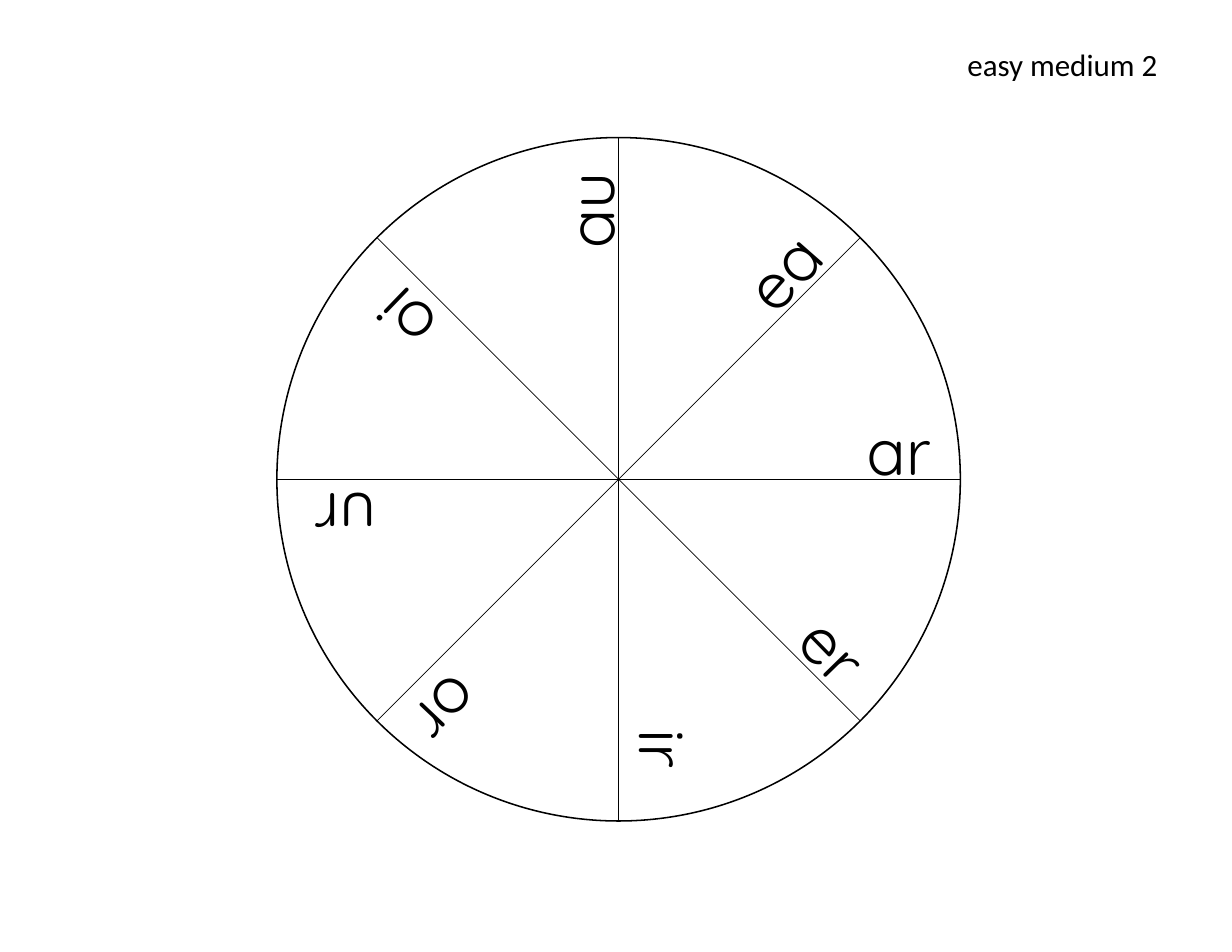
from math import cos, radians, sin

from lxml import etree
from pptx import Presentation
from pptx.dml.color import RGBColor
from pptx.enum.shapes import MSO_CONNECTOR, MSO_SHAPE
from pptx.enum.text import MSO_AUTO_SIZE
from pptx.oxml.ns import qn
from pptx.util import Cm, Pt

STRAIGHT = MSO_CONNECTOR.STRAIGHT
OVAL = MSO_SHAPE.OVAL
GROW = MSO_AUTO_SIZE.SHAPE_TO_FIT_TEXT
BLACK = RGBColor(0x00, 0x00, 0x00)

# Content, lengths in cm: text, centre x, centre y, box width, rotation
LABELS = [
    ("ar", 20.55, 10.22, 2.29, 0),
    ("er", 18.99, 14.82, 2.11, 45.7),
    ("ir", 15.06, 17.23, 1.88, 90),
    ("or", 10.16, 16.14, 1.98, 133.5),
    ("ur", 7.73, 11.77, 2.11, 180),
    ("oi", 9.12, 7.2, 1.88, 224),
    ("au", 13.36, 4.48, 2.79, 270),
    ("ea", 17.93, 5.96, 2.74, 311.3),
]
LABEL_HEIGHT = 2.06
LABEL_FONT = {"name": "Quicksand", "size": Pt(41.9)}
TITLE = "easy medium 2"
TITLE_BOX = (21.69, 0.91, 5.16, 1.12)
TITLE_FONT = {"name": "Calibri", "size": Pt(19.9)}
CENTRE_X, CENTRE_Y = 14.03, 10.87
RADIUS = 7.75
SPOKE_ANGLES = (90, 0, 45, 135)


def add_text(shapes, text, place, font, rotation=0):
    box = shapes.add_textbox(*map(Cm, place))
    box.rotation = rotation
    frame = box.text_frame
    frame.word_wrap = True
    frame.auto_size = GROW
    span = frame.paragraphs[0].add_run()
    span.text = text
    for key, value in font.items():
        setattr(span.font, key, value)
    span.font.color.rgb = BLACK


def set_line(shape, width):
    shape.line.color.rgb = BLACK
    shape.line.width = Pt(width)


deck = Presentation()
deck.slide_width, deck.slide_height = Cm(27.94), Cm(21.59)
page = deck.slides.add_slide(deck.slide_layouts[6])

# Wheel: rim and four diameters
wheel = page.shapes.add_group_shape().shapes
rim = wheel.add_shape(OVAL, Cm(CENTRE_X - RADIUS), Cm(CENTRE_Y - RADIUS),
                      Cm(2 * RADIUS), Cm(2 * RADIUS))
rim.shadow.inherit = False
rim.fill.background()
set_line(rim, 1)
for angle in SPOKE_ANGLES:
    dx = RADIUS * cos(radians(angle))
    dy = RADIUS * sin(radians(angle))
    spoke = wheel.add_connector(STRAIGHT, Cm(CENTRE_X - dx), Cm(CENTRE_Y - dy),
                                Cm(CENTRE_X + dx), Cm(CENTRE_Y + dy))
    set_line(spoke, 0.5)
    etree.SubElement(spoke.element.spPr, qn("a:effectLst"))

# Sound labels, turned to follow the spokes
labels = page.shapes.add_group_shape().shapes
for text, x, y, width, rotation in LABELS:
    place = (x - width / 2, y - LABEL_HEIGHT / 2, width, LABEL_HEIGHT)
    add_text(labels, text, place, LABEL_FONT, rotation)

# Title
add_text(page.shapes, TITLE, TITLE_BOX, TITLE_FONT)

deck.save("out.pptx")
